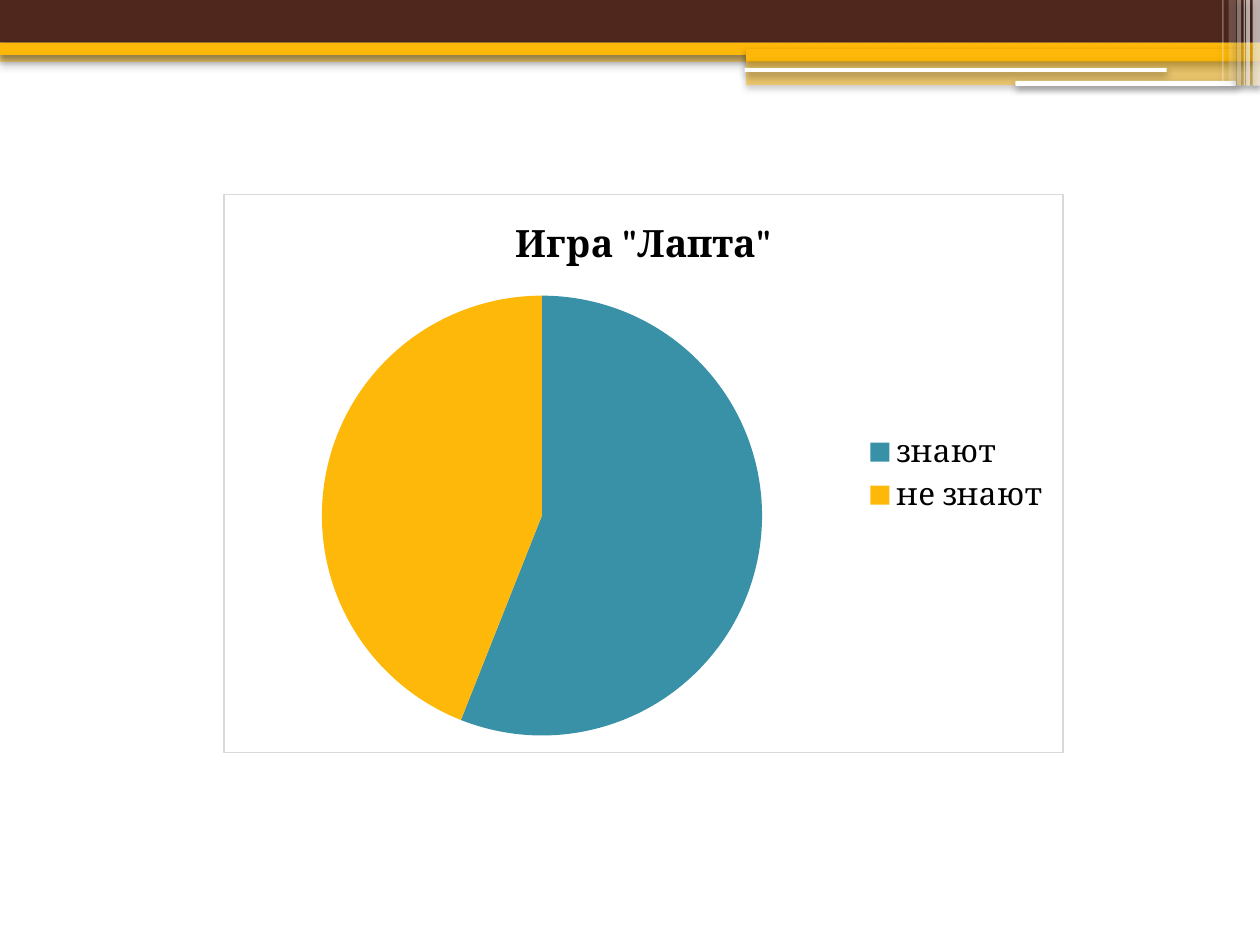
"""Build a slide with a banded header and a pie chart about the game of lapta."""
from lxml import etree
from pptx import Presentation
from pptx.chart.data import CategoryChartData
from pptx.dml.color import RGBColor
from pptx.enum.chart import XL_CHART_TYPE, XL_LEGEND_POSITION
from pptx.enum.shapes import MSO_SHAPE
from pptx.oxml import parse_xml
from pptx.oxml.ns import nsdecls, qn
from pptx.util import Cm, Pt

RECTANGLE = MSO_SHAPE.RECTANGLE
ROUNDED = MSO_SHAPE.ROUNDED_RECTANGLE
PIE = XL_CHART_TYPE.PIE
LEGEND_RIGHT = XL_LEGEND_POSITION.RIGHT

COLOURS = {
    "brown": "4F271C",
    "gold": "FEB80A",
    "teal": "3891A7",
    "white": "FFFFFF",
    "black": "000000",
    "border": "D9D9D9",
}
TITLE = 'Игра "Лапта"'

presentation = Presentation()
presentation.slide_width = Cm(25.4)
presentation.slide_height = Cm(19.05)
slide = presentation.slides.add_slide(presentation.slide_layouts[6])


def add_band(kind, left, top, width, height, colour, opacity=100):
    shape = slide.shapes.add_shape(kind, Cm(left), Cm(top), Cm(width), Cm(height))
    shape.fill.solid()
    shape.fill.fore_color.rgb = RGBColor.from_string(COLOURS[colour])
    shape.line.fill.background()
    shape.shadow.inherit = False
    properties = shape._element.spPr
    if opacity < 100:
        fill_colour = properties.find(qn("a:solidFill")).find(qn("a:srgbClr"))
        etree.SubElement(fill_colour, qn("a:alpha"), val=str(opacity * 1000))
    properties.find(qn("a:effectLst")).append(parse_xml(
        f'<a:outerShdw {nsdecls("a")} blurRad="{Pt(4.1)}" dist="{Pt(2)}" '
        f'dir="5400000" algn="ctr" rotWithShape="0">'
        f'<a:srgbClr val="{COLOURS["black"]}"><a:alpha val="40000"/></a:srgbClr>'
        f'</a:outerShdw>'))


header_bands = [
    (RECTANGLE, 0, 1.02, 25.4, 0.23, "gold", 50),
    (RECTANGLE, 0, 0, 25.4, 0.86, "brown", 100),
    (RECTANGLE, 0, 0.86, 25.4, 0.25, "gold", 100),
    (RECTANGLE, 15.04, 0.99, 10.36, 0.25, "gold", 100),
    (RECTANGLE, 15.04, 1.22, 10.36, 0.5, "gold", 50),
    (ROUNDED, 15.01, 1.37, 8.51, 0.08, "white", 100),
    (ROUNDED, 20.47, 1.63, 4.45, 0.1, "white", 100),
]
for band in header_bands:
    add_band(*band)

stripes = [
    (25.25, 0.15, 1.73, 65),
    (25.12, 0.08, 1.73, 65),
    (25.07, 0.03, 1.73, 60),
    (24.94, 0.08, 1.73, 40),
    (24.77, 0.15, 1.63, 20),
    (24.64, 0.03, 1.63, 30),
]
for left, width, height, opacity in stripes:
    add_band(RECTANGLE, left, 0, width, height, "white", opacity)

chart_data = CategoryChartData()
chart_data.categories = ["знают", "не знают"]
chart_data.add_series(TITLE, (56, 44))
chart = slide.shapes.add_chart(
    PIE, Cm(4.5), Cm(3.91), Cm(16.94), Cm(11.28), chart_data).chart
chart.font.size = Pt(10)
chart.font.name = "Arial"

chart.has_title = True
paragraph = chart.chart_title.text_frame.paragraphs[0]
run = paragraph.add_run()
run.text = TITLE
run.font.bold = True
chart.chart_title.include_in_layout = False

chart.has_legend = True
chart.legend.position = LEGEND_RIGHT
chart.legend.include_in_layout = False

for font, size in ((run.font, 21.6), (chart.legend.font, 18)):
    font.name = "Cambria"
    font.size = Pt(size)
    font.color.rgb = RGBColor.from_string(COLOURS["black"])

plot = chart.plots[0]
plot.vary_by_categories = True
for index, colour in enumerate(("teal", "gold")):
    fill = plot.series[0].points[index].format.fill
    fill.solid()
    fill.fore_color.rgb = RGBColor.from_string(COLOURS[colour])

chart._chartSpace.find(qn("c:chart")).addnext(parse_xml(
    f'<c:spPr {nsdecls("c", "a")}>'
    f'<a:solidFill><a:srgbClr val="{COLOURS["white"]}"/></a:solidFill>'
    f'<a:ln w="{Pt(0.75)}"><a:solidFill><a:srgbClr val="{COLOURS["border"]}"/>'
    f'</a:solidFill></a:ln></c:spPr>'))

presentation.save("out.pptx")
